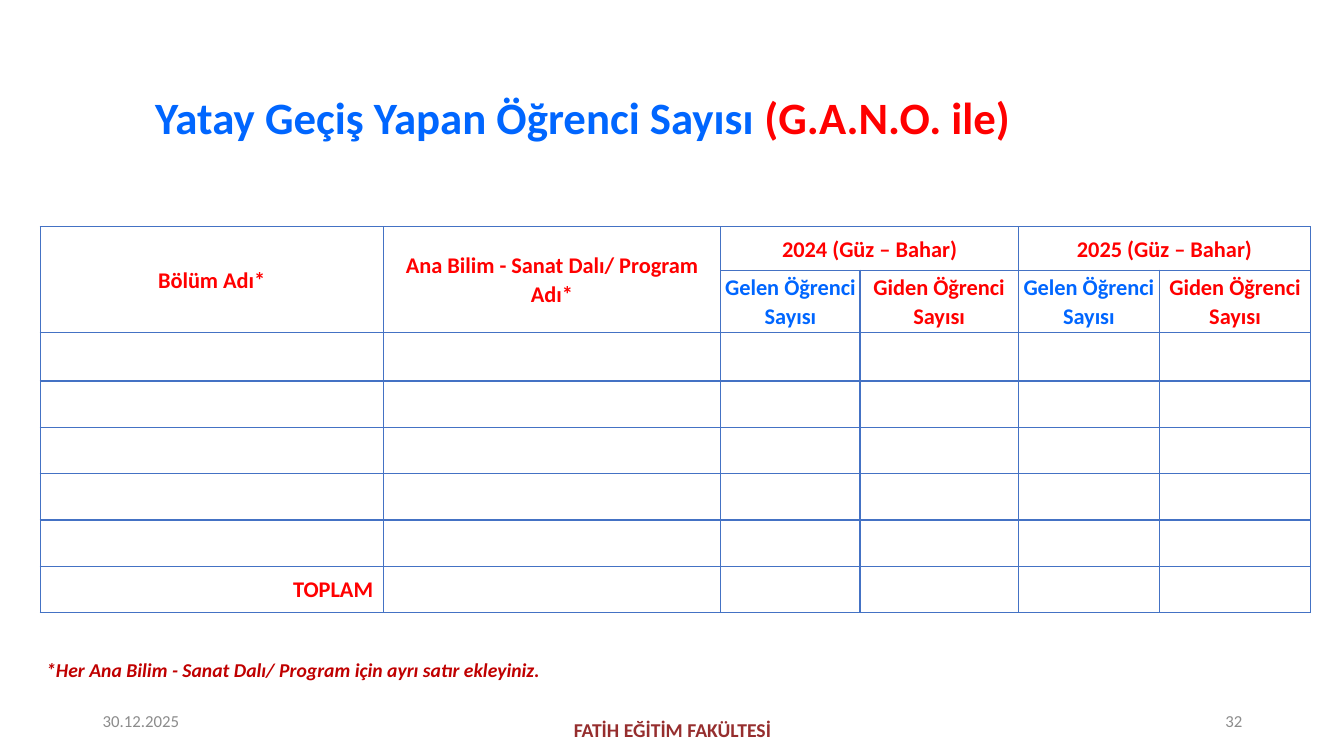
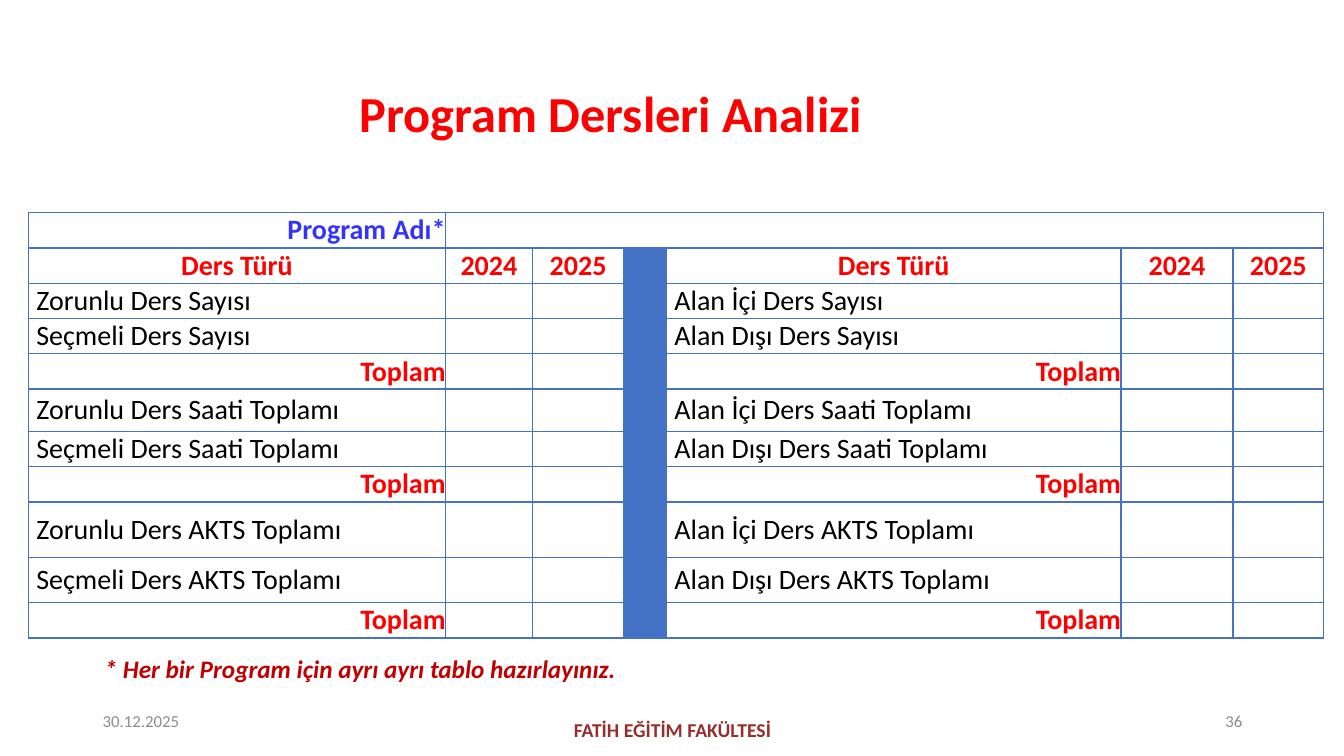
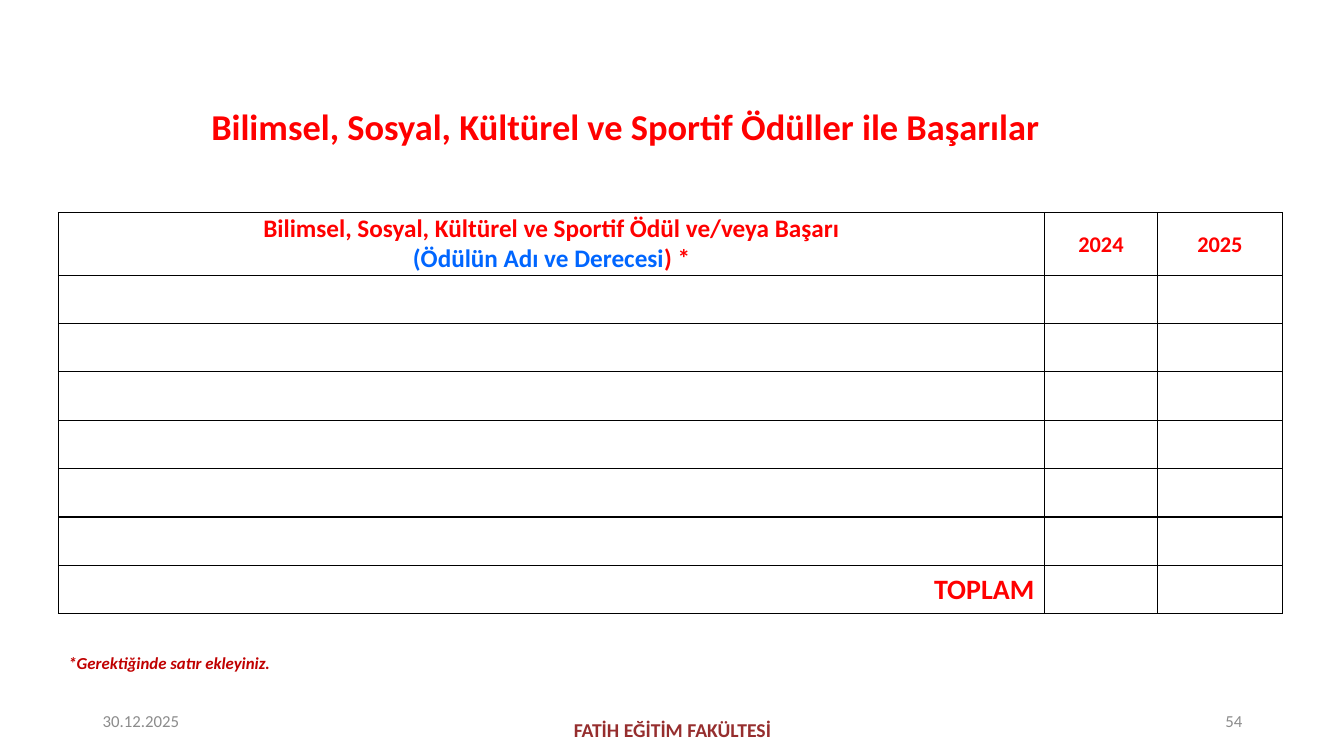
"""Build three faculty report slides with tables to be filled in."""
from lxml.etree import SubElement
from pptx import Presentation
from pptx.dml.color import RGBColor
from pptx.enum.text import MSO_ANCHOR, PP_ALIGN
from pptx.oxml.ns import qn
from pptx.util import Inches, Pt

RED = RGBColor(0xFF, 0x00, 0x00)
BLUE = RGBColor(0x00, 0x66, 0xFF)
VIOLET = RGBColor(0x33, 0x33, 0xFF)
BLACK = RGBColor(0x00, 0x00, 0x00)
GREY = RGBColor(0x8C, 0x8C, 0x8C)
MAROON = RGBColor(0x96, 0x2E, 0x2E)
CRIMSON = RGBColor(0xC0, 0x00, 0x00)
STEEL = RGBColor(0x44, 0x72, 0xC4)
FONT = "Calibri"
LEFT, MID, RIGHT = PP_ALIGN.LEFT, PP_ALIGN.CENTER, PP_ALIGN.RIGHT

COMING = ("Gelen Öğrenci Sayısı", BLUE)
GOING = ("Giden Öğrenci Sayısı", RED)
COURSES = [
    ("Zorunlu Ders Sayısı", "Alan İçi Ders Sayısı"),
    ("Seçmeli Ders Sayısı", "Alan Dışı Ders Sayısı"),
    ("Toplam", "Toplam"),
    ("Zorunlu Ders Saati Toplamı", "Alan İçi Ders Saati Toplamı"),
    ("Seçmeli Ders Saati Toplamı", "Alan Dışı Ders Saati Toplamı"),
    ("Toplam", "Toplam"),
    ("Zorunlu Ders AKTS Toplamı", "Alan İçi Ders AKTS Toplamı"),
    ("Seçmeli Ders AKTS Toplamı", "Alan Dışı Ders AKTS Toplamı"),
    ("Toplam", "Toplam"),
]


def head(*runs, size=16, space=1.07):
    return dict(paras=[runs], size=size, space=space)


def total(text, size):
    return dict(paras=[[(text, RED)]], size=size, align=RIGHT)


def course(text):
    if text == "Toplam":
        return total(text, 20)
    return dict(paras=[[(text, BLACK)]], size=20, align=LEFT, bold=False)


def program():
    cells = {(0, 0): dict(paras=[[("Program Adı*", VIOLET)]], size=20, align=RIGHT)}
    for col, text in enumerate(["Ders Türü", "2024", "2025"]):
        for start in (0, 4):
            cells[1, start + col] = head((text, RED), size=20, space=1)
    for row, pair in enumerate(COURSES, 2):
        for col, text in zip((0, 4), pair):
            cells[row, col] = course(text)
    return cells


SLIDES = [
    dict(
        number="32",
        title=[("Yatay Geçiş Yapan Öğrenci Sayısı ", BLUE), ("(G.A.N.O. ile)", RED)],
        place=(0.08, 0.88, 11.4, 0.63), size=32,
        table=dict(
            at=(0.4, 2.25), line=STEEL, pad=0.1,
            cols=[3.4, 3.35, 1.38, 1.57, 1.4, 1.5],
            rows=[0.43, 0.62, 0.48] + [0.46] * 5,
            spans=[(0, 0, 1, 0), (0, 1, 1, 1), (0, 2, 0, 3), (0, 4, 0, 5)],
            cells={
                (0, 0): head(("Bölüm Adı*", RED)),
                (0, 1): head(("Ana Bilim - Sanat Dalı/ Program Adı*", RED)),
                (0, 2): head(("2024 (Güz – Bahar)", RED)),
                (0, 4): head(("2025 (Güz – Bahar)", RED)),
                (1, 2): head(COMING), (1, 3): head(GOING),
                (1, 4): head(COMING), (1, 5): head(GOING),
                (7, 0): total("TOPLAM", 16),
            }),
        note="*Her Ana Bilim - Sanat Dalı/ Program için ayrı satır ekleyiniz.",
        under=(0.36, 6.48, 6.93, 0.34), small=14),
    dict(
        number="36",
        title=[("Program Dersleri Analizi", RED)],
        place=(0.41, 0.82, 11.3, 0.67), size=36,
        table=dict(
            at=(0.28, 2.11), line=STEEL, pad=0, band=3,
            cols=[4.14, 0.86, 0.91, 0.42, 4.51, 1.11, 0.9],
            rows=[0.35] * 5 + [0.42, 0.35, 0.35, 0.55, 0.45, 0.35],
            spans=[(0, 1, 0, 6)], cells=program()),
        note="* Her bir Program için ayrı ayrı tablo hazırlayınız.",
        under=(0.94, 6.43, 7.66, 0.4), small=18),
    dict(
        number="54",
        title=[("Bilimsel, Sosyal, Kültürel ve Sportif Ödüller ile Başarılar", RED)],
        place=(0.58, 0.97, 11.26, 0.61), size=26,
        table=dict(
            at=(0.58, 2.11), line=BLACK, pad=0.1,
            cols=[9.78, 1.12, 1.24], rows=[0.62] + [0.48] * 7, spans=[],
            cells={
                (0, 0): dict(size=18, paras=[
                    [("Bilimsel, Sosyal, Kültürel ve Sportif Ödül ve/veya Başarı", RED)],
                    [("(Ödülün Adı ve Derecesi", BLUE), (") *", RED)]]),
                (0, 1): head(("2024", RED)),
                (0, 2): head(("2025", RED)),
                (7, 0): total("TOPLAM", 20),
            }),
        note="*Gerektiğinde satır ekleyiniz.",
        under=(0.58, 6.43, 5, 0.3), small=12),
]


def write(frame, paras, size, align=MID, bold=True, slant=False, space=1):
    for index, runs in enumerate(paras):
        para = frame.add_paragraph() if index else frame.paragraphs[0]
        para.alignment, para.line_spacing = align, space
        font = para.font
        font.name, font.size, font.bold, font.italic = FONT, Pt(size), bold, slant
        font.color.rgb = runs[0][1]
        for text, color in runs:
            run = para.add_run()
            run.text = text
            if len(runs) > 1:
                run.font.color.rgb = color


def label(slide, place, runs, size, anchor=MSO_ANCHOR.MIDDLE, **style):
    frame = slide.shapes.add_textbox(*map(Inches, place)).text_frame
    frame.word_wrap = True
    frame.vertical_anchor = anchor
    write(frame, [runs], size, **style)


def edge(cell, color):
    props = cell._tc.get_or_add_tcPr()
    for side in "LRTB":
        line = SubElement(props, qn(f"a:ln{side}"), w=str(Pt(1)))
        fill = SubElement(line, qn("a:solidFill"))
        SubElement(fill, qn("a:srgbClr"), val=str(color))


def grid(slide, at, cols, rows, spans, cells, line, pad, band=None):
    size = (*at, sum(cols), sum(rows))
    table = slide.shapes.add_table(len(rows), len(cols), *map(Inches, size)).table
    table.first_row = table.horz_banding = False
    for col, width in zip(table.columns, cols):
        col.width = Inches(width)
    for row, height in zip(table.rows, rows):
        row.height = Inches(height)
    for top, left, low, right in spans:
        table.cell(top, left).merge(table.cell(low, right))
    for row in range(len(rows)):
        for col in range(len(cols)):
            cell, item = table.cell(row, col), cells.get((row, col))
            cell.margin_top = cell.margin_bottom = 0
            cell.margin_left = cell.margin_right = 0
            cell.vertical_anchor = MSO_ANCHOR.MIDDLE
            edge(cell, line)
            if col == band and row:
                cell.fill.solid()
                cell.fill.fore_color.rgb = STEEL
            else:
                cell.fill.background()
            if item:
                align = item.get("align")
                cell.margin_left = Inches(0.08 if align == LEFT else 0)
                cell.margin_right = Inches(pad if align == RIGHT else 0)
                write(cell.text_frame, **item)


def main():
    deck = Presentation()
    deck.slide_width, deck.slide_height = Inches(13.33), Inches(7.5)
    for page in SLIDES:
        slide = deck.slides.add_slide(deck.slide_layouts[6])
        label(slide, (4.42, 7.04, 4.5, 0.4), [("FATİH EĞİTİM FAKÜLTESİ", MAROON)], 14)
        label(slide, page["place"], page["title"], page["size"], space=0.9)
        for left, text, align in ((0.92, "30.12.2025", LEFT), (9.42, page["number"], RIGHT)):
            label(slide, (left, 6.95, 3, 0.4), [(text, GREY)], 12, align=align, bold=False)
        grid(slide, **page["table"])
        label(slide, page["under"], [(page["note"], CRIMSON)], page["small"],
              anchor=MSO_ANCHOR.TOP, align=LEFT, slant=True)
    deck.save("out.pptx")


if __name__ == "__main__":
    main()
